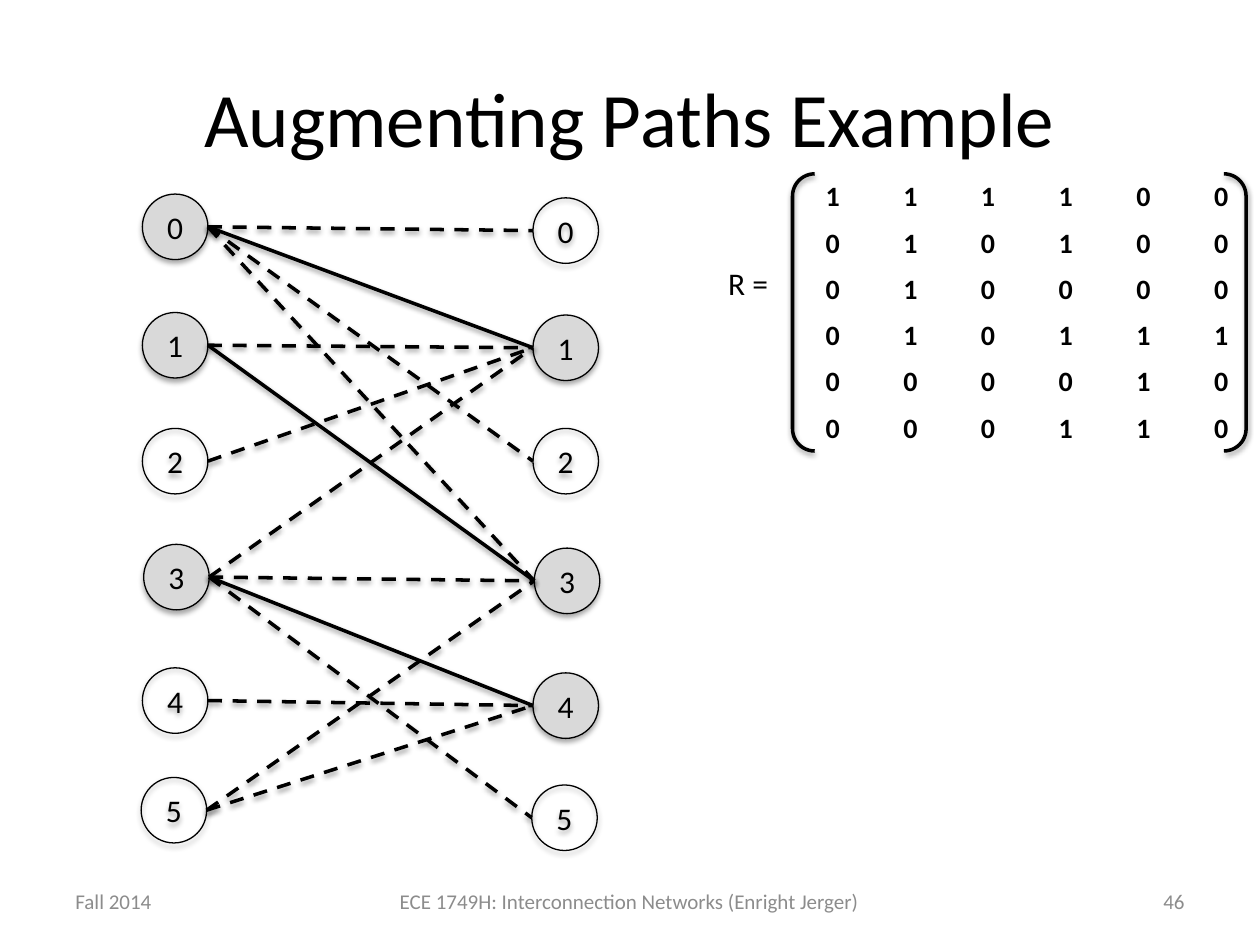
import pptx
import pptx.util
from lxml import etree
from pptx.dml.color import RGBColor
from pptx.enum.dml import MSO_LINE
from pptx.enum.shapes import MSO_CONNECTOR, MSO_SHAPE
from pptx.enum.text import MSO_ANCHOR, PP_ALIGN
from pptx.oxml.ns import qn

# Content
TITLE = "Augmenting Paths Example"
MATRIX_LABEL = "R ="
REQUESTS = [
    [1, 1, 1, 1, 0, 0],
    [0, 1, 0, 1, 0, 0],
    [0, 1, 0, 0, 0, 0],
    [0, 1, 0, 1, 1, 1],
    [0, 0, 0, 0, 1, 0],
    [0, 0, 0, 1, 1, 0],
]
MATCHING = {0: 1, 1: 3, 3: 4}  # input: granted output

# Geometry in inches
WIDTH, HEIGHT = 10, 7.5
MARGIN = WIDTH / 20
NODE_SIZE = 0.52
INPUT_NODES = [(1.13, 1.54), (1.13, 2.48), (1.13, 3.4),
               (1.14, 4.32), (1.13, 5.3), (1.12, 6.17)]
OUTPUT_NODES = [(4.23, 1.57), (4.23, 2.5), (4.23, 3.4),
                (4.24, 4.35), (4.23, 5.34), (4.22, 6.23)]
MATRIX_BOX = (6.3, 1.38, 3.7, 2.2)
BRACKET_BOX = (6.29, 1.38, 3.6, 2.2)
FOOTER_TOP, FOOTER_HEIGHT = 6.95, 0.4

FOOTERS = [
    ("Fall 2014", MARGIN, 2.33, PP_ALIGN.LEFT),
    ("ECE 1749H: Interconnection Networks (Enright Jerger)",
     2.83, 4.33, PP_ALIGN.CENTER),
    ("46", 7.17, 2.33, PP_ALIGN.RIGHT),
]

FONT = "Calibri"
COLORS = {"ink": "000000", "muted": "8C8C8C", "matched": "D9D9D9", "paper": "FFFFFF"}


def color(name):
    return RGBColor.from_string(COLORS[name])


def inches(*lengths):
    return [pptx.util.Inches(length) for length in lengths]


def write(text_frame, text, size, ink="ink", align=PP_ALIGN.CENTER, bold=False):
    text_frame.text = text
    paragraph = text_frame.paragraphs[0]
    paragraph.alignment = align
    font = paragraph.runs[0].font
    font.name, font.size, font.bold = FONT, pptx.util.Pt(size), bold
    font.color.rgb = color(ink)


def add_text(slide, box, text, size, wrap=True, anchor=MSO_ANCHOR.MIDDLE, **style):
    text_frame = slide.shapes.add_textbox(*inches(*box)).text_frame
    text_frame.word_wrap = wrap
    text_frame.vertical_anchor = anchor
    write(text_frame, text, size, **style)


def draw_outline(shape, width, distance, opacity):
    """Black line with a soft shadow straight below."""
    shape.line.color.rgb = color("ink")
    shape.line.width = pptx.util.Pt(width)
    properties = shape._element.spPr
    for old_effects in properties.findall(qn("a:effectLst")):
        properties.remove(old_effects)
    effects = etree.SubElement(properties, qn("a:effectLst"))
    shadow = etree.SubElement(
        effects, qn("a:outerShdw"), blurRad=str(pptx.util.Pt(3.1)),
        dist=str(pptx.util.Pt(distance)), dir="5400000", rotWithShape="0")
    shade = etree.SubElement(shadow, qn("a:srgbClr"), val=COLORS["ink"])
    etree.SubElement(shade, qn("a:alpha"), val=str(opacity * 1000))


def add_matrix(slide):
    left, top, width, height = MATRIX_BOX
    rows, columns = len(REQUESTS), len(REQUESTS[0])
    table = slide.shapes.add_table(rows, columns, *inches(*MATRIX_BOX)).table
    table.first_row = table.horz_banding = False
    for column in table.columns:
        column.width = pptx.util.Inches(width / columns)
    for row, values in zip(table.rows, REQUESTS):
        row.height = pptx.util.Inches(height / rows)
        for cell, value in zip(row.cells, values):
            cell.fill.solid()
            cell.fill.fore_color.rgb = color("paper")
            write(cell.text_frame, str(value), 16, bold=True)

    add_text(slide, (5.68, 2.05, 0.52, 0.4), MATRIX_LABEL, 18, wrap=False,
             anchor=MSO_ANCHOR.TOP, align=PP_ALIGN.LEFT)
    brackets = slide.shapes.add_shape(MSO_SHAPE.DOUBLE_BRACKET, *inches(*BRACKET_BOX))
    brackets.adjustments[0] = 0.08
    brackets.fill.background()
    draw_outline(brackets, 2, 1.6, 38)


def add_node(slide, position, label, matched):
    node = slide.shapes.add_shape(
        MSO_SHAPE.OVAL, *inches(*position, NODE_SIZE, NODE_SIZE))
    if matched:
        node.fill.solid()
        node.fill.fore_color.rgb = color("matched")
    else:
        node.fill.background()
    draw_outline(node, 0.75, 1.8, 35)
    node.text_frame.vertical_anchor = MSO_ANCHOR.MIDDLE
    write(node.text_frame, label, 18)


def add_edge(slide, source, target):
    """Join the right side of an input to the left side of an output."""
    start_x, start_y = INPUT_NODES[source]
    end_x, end_y = OUTPUT_NODES[target]
    edge = slide.shapes.add_connector(
        MSO_CONNECTOR.STRAIGHT,
        *inches(start_x + NODE_SIZE, start_y + NODE_SIZE / 2,
                end_x, end_y + NODE_SIZE / 2))
    draw_outline(edge, 2, 1.6, 38)
    if MATCHING.get(source) != target:
        edge.line.dash_style = MSO_LINE.DASH


def main():
    presentation = pptx.Presentation()
    presentation.slide_width, presentation.slide_height = inches(WIDTH, HEIGHT)
    slide = presentation.slides.add_slide(presentation.slide_layouts[6])

    # Title and footer
    add_text(slide, (MARGIN, 0.3, WIDTH - 2 * MARGIN, 1.25), TITLE, 44)
    for text, left, width, align in FOOTERS:
        add_text(slide, (left, FOOTER_TOP, width, FOOTER_HEIGHT), text, 12,
                 ink="muted", align=align)

    # Request matrix
    add_matrix(slide)

    # Bipartite graph: one edge for each request, solid when matched
    for index, (source, target) in enumerate(zip(INPUT_NODES, OUTPUT_NODES)):
        add_node(slide, source, str(index), index in MATCHING)
        add_node(slide, target, str(index), index in MATCHING.values())
    for source, row in enumerate(REQUESTS):
        for target, requested in enumerate(row):
            if requested:
                add_edge(slide, source, target)

    presentation.save("out.pptx")


if __name__ == "__main__":
    main()
